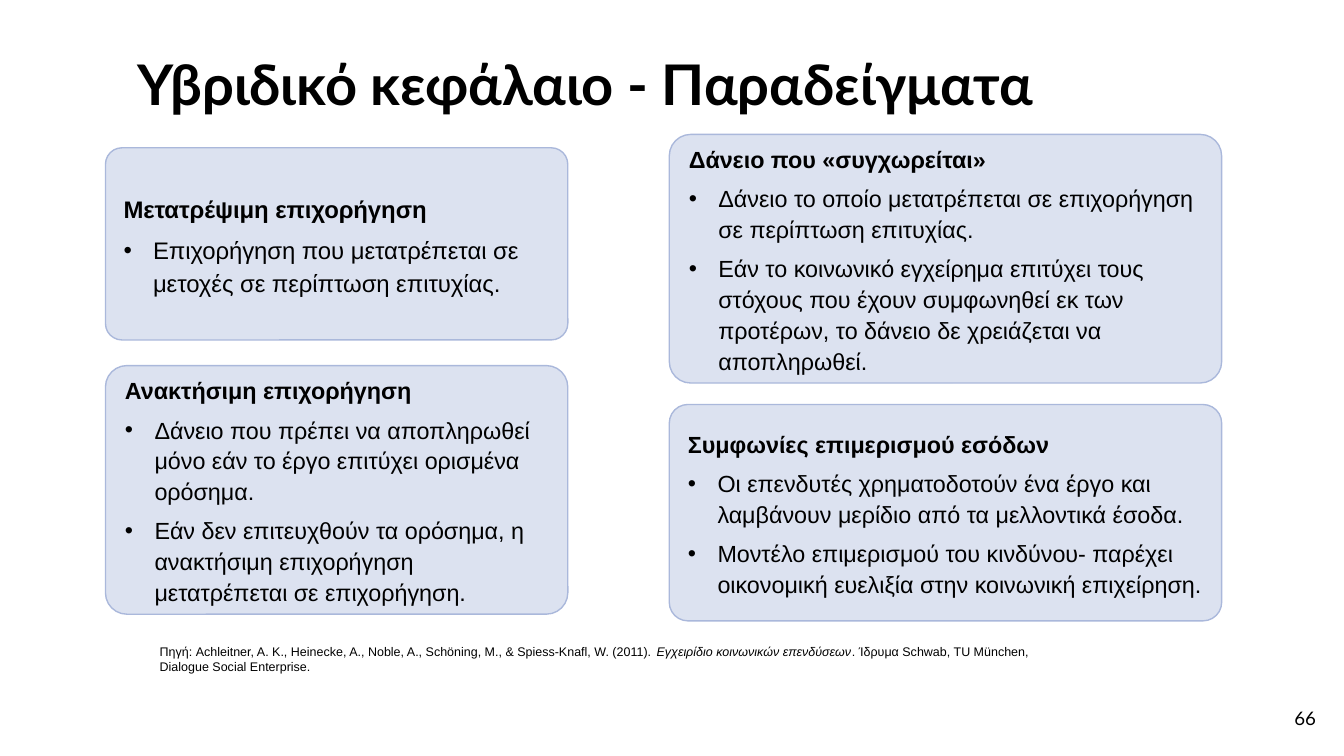
from lxml.etree import SubElement
from pptx import Presentation
from pptx.dml.color import RGBColor
from pptx.enum.shapes import MSO_SHAPE
from pptx.enum.text import MSO_ANCHOR, PP_ALIGN
from pptx.oxml.ns import qn
from pptx.util import Emu, Pt

PIXEL = 4572
COLORS = {"text": "000000", "card": "DCE2F0", "border": "AAB8DB"}

CARDS = [
    ((157, 220, 688, 286), 12.75, 1.15, "Μετατρέψιμη επιχορήγηση", [
        "Επιχορήγηση που μετατρέπεται σε μετοχές σε περίπτωση επιτυχίας.",
    ]),
    ((157, 544, 688, 370), 12.5, 1.1, "Ανακτήσιμη επιχορήγηση", [
        "Δάνειο που πρέπει να αποπληρωθεί μόνο εάν το έργο επιτύχει ορισμένα ορόσημα.",
        "Εάν δεν επιτευχθούν τα ορόσημα, η ανακτήσιμη επιχορήγηση "
        "μετατρέπεται σε επιχορήγηση.",
    ]),
    ((996, 200, 822, 370), 12.5, 1.1, "Δάνειο που «συγχωρείται»", [
        "Δάνειο το οποίο μετατρέπεται σε επιχορήγηση σε περίπτωση επιτυχίας.",
        "Εάν το κοινωνικό εγχείρημα επιτύχει τους στόχους που έχουν συμφωνηθεί "
        "εκ των προτέρων, το δάνειο δε χρειάζεται να αποπληρωθεί.",
    ]),
    ((996, 602, 822, 322), 12.5, 1.1, "Συμφωνίες επιμερισμού εσόδων", [
        "Οι επενδυτές χρηματοδοτούν ένα έργο και λαμβάνουν μερίδιο "
        "από τα μελλοντικά έσοδα.",
        "Μοντέλο επιμερισμού του κινδύνου- παρέχει οικονομική ευελιξία "
        "στην κοινωνική επιχείρηση.",
    ]),
]
SOURCE = [
    ("Πηγή: Achleitner, A. K., Heinecke, A., Noble, A., Schöning, M., "
     "& Spiess-Knafl, W. (2011). ", False),
    ("Εγχειρίδιο κοινωνικών επενδύσεων", True),
    (". Ίδρυμα Schwab, TU München, Dialogue Social Enterprise.", False),
]


def px(value):
    """Turn px into EMU."""
    return Emu(value * PIXEL)


def color(name):
    """Look up a named colour."""
    return RGBColor.from_string(COLORS[name])


def add_text(paragraph, text, size, font="Arial", bold=False, italic=False):
    """Append a formatted run to a paragraph."""
    run = paragraph.add_run()
    run.text = text
    run.font.name = font
    run.font.size = Pt(size)
    run.font.bold = bold
    run.font.italic = italic
    run.font.color.rgb = color("text")


def add_bullet(paragraph, indent=44):
    """Give a paragraph a hanging bullet."""
    properties = paragraph._p.get_or_add_pPr()
    properties.set("marL", str(px(indent)))
    properties.set("indent", str(px(-indent)))
    bullet_color = SubElement(properties, qn("a:buClr"))
    SubElement(bullet_color, qn("a:srgbClr"), val=COLORS["text"])
    SubElement(properties, qn("a:buFont"), typeface="Arial")
    SubElement(properties, qn("a:buChar"), char="•")


def set_frame(shape, horizontal, vertical, anchor):
    """Set wrapping, insets and anchor, and return the text frame."""
    frame = shape.text_frame
    frame.word_wrap = True
    frame.margin_left = frame.margin_right = px(horizontal)
    frame.margin_top = frame.margin_bottom = px(vertical)
    frame.vertical_anchor = anchor
    return frame


def add_text_box(slide, box, horizontal=0, vertical=0, anchor=MSO_ANCHOR.TOP):
    """Add a text box and return its first paragraph."""
    shape = slide.shapes.add_textbox(*map(px, box))
    return set_frame(shape, horizontal, vertical, anchor).paragraphs[0]


def add_card(slide, box, size, line_spacing, heading, points):
    """Draw a rounded card with a heading and bullets."""
    shape = slide.shapes.add_shape(MSO_SHAPE.ROUNDED_RECTANGLE, *map(px, box))
    shape.adjustments[0] = 0.086
    shape.shadow.inherit = False
    shape.fill.solid()
    shape.fill.fore_color.rgb = color("card")
    shape.line.color.rgb = color("border")
    shape.line.width = Pt(0.75)
    frame = set_frame(shape, 20, 10, MSO_ANCHOR.MIDDLE)
    paragraph = frame.paragraphs[0]
    add_text(paragraph, heading, size, bold=True)
    for point in points:
        paragraph = frame.add_paragraph()
        paragraph.space_before = Pt(4.5)
        add_bullet(paragraph)
        add_text(paragraph, point, size)
    for paragraph in frame.paragraphs:
        paragraph.alignment = PP_ALIGN.LEFT
        paragraph.line_spacing = line_spacing


def add_title(slide, box):
    """Write the slide title."""
    paragraph = add_text_box(slide, box)
    add_text(paragraph, "Υβριδικό κεφάλαιο - Παραδείγματα", 30, font="Lato", bold=True)


def add_source(slide, box):
    """Write the citation below the cards."""
    paragraph = add_text_box(slide, box, 20, 10)
    for text, italic in SOURCE:
        add_text(paragraph, text, 6.75, italic=italic)


def add_page_number(slide, box):
    """Write the page number."""
    paragraph = add_text_box(slide, box, 20, 20, MSO_ANCHOR.MIDDLE)
    paragraph.alignment = PP_ALIGN.RIGHT
    add_text(paragraph, "66", 10, font="Lato")


def main():
    """Build and save the slide."""
    presentation = Presentation()
    presentation.slide_width = px(2000)
    presentation.slide_height = px(1125)
    slide = presentation.slides.add_slide(presentation.slide_layouts[6])
    add_title(slide, (204, 74, 1466, 106))
    for card in CARDS:
        add_card(slide, *card)
    add_source(slide, (218, 948, 1348, 88))
    add_page_number(slide, (1858, 1026, 120, 86))
    presentation.save("out.pptx")


if __name__ == "__main__":
    main()
